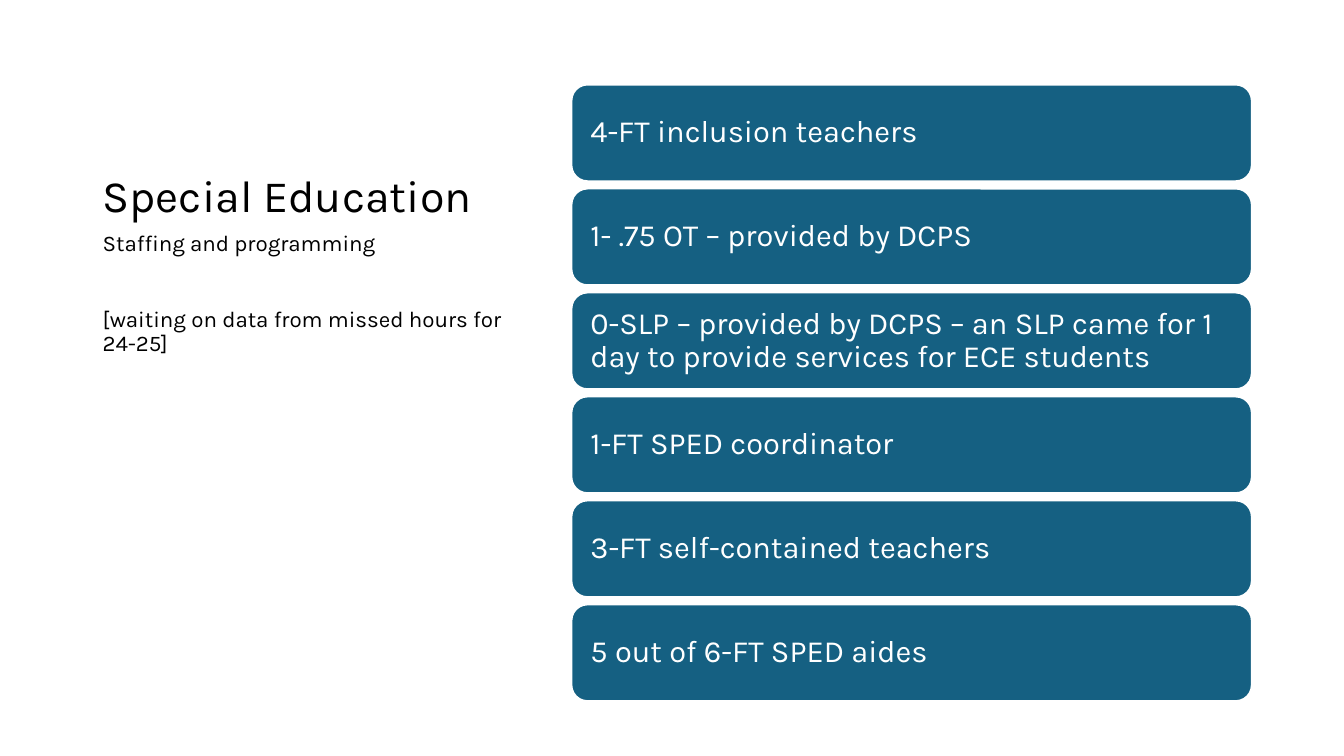
from dataclasses import dataclass

from pptx import Presentation
from pptx.dml.color import RGBColor
from pptx.enum.shapes import MSO_SHAPE
from pptx.enum.text import MSO_ANCHOR, PP_ALIGN
from pptx.util import Cm, Pt


@dataclass(frozen=True)
class Theme:
    font: str = "Karla"
    ink: RGBColor = RGBColor(0x00, 0x00, 0x00)
    paper: RGBColor = RGBColor(0xFF, 0xFF, 0xFF)
    card: RGBColor = RGBColor(0x15, 0x60, 0x82)
    title_size: int = 32
    card_size: int = 22
    body_size: int = 16


def write(tf, text, *, font, size, color, before=0, new=False):
    """Fill the first paragraph of tf, or a new one after it."""
    p = tf.add_paragraph() if new else tf.paragraphs[0]
    p.alignment = PP_ALIGN.LEFT
    p.line_spacing = 0.9
    p.space_before = Pt(before)
    r = p.add_run()
    r.text = text
    r.font.name = font
    r.font.size = Pt(size)
    r.font.color.rgb = color


class SlideBuilder:
    def __init__(self, prs, theme):
        self.theme = theme
        self.s = prs.slides.add_slide(prs.slide_layouts[6])

    def text(self, x, y, w, h, lines, size, anchor=MSO_ANCHOR.TOP):
        """Add a text box; lines holds pairs of text and space before in points."""
        tf = self.s.shapes.add_textbox(Cm(x), Cm(y), Cm(w), Cm(h)).text_frame
        tf.word_wrap = True
        tf.vertical_anchor = anchor
        for i, (line, before) in enumerate(lines):
            write(tf, line, font=self.theme.font, size=size,
                  color=self.theme.ink, before=before, new=i > 0)

    def card(self, x, y, w, h, text):
        sp = self.s.shapes.add_shape(
            MSO_SHAPE.ROUNDED_RECTANGLE, Cm(x), Cm(y), Cm(w), Cm(h))
        sp.shadow.inherit = False
        sp.fill.solid()
        sp.fill.fore_color.rgb = self.theme.card
        sp.line.color.rgb = self.theme.paper
        sp.line.width = Pt(1.5)
        tf = sp.text_frame
        tf.word_wrap = True
        tf.vertical_anchor = MSO_ANCHOR.MIDDLE
        tf.margin_left = tf.margin_right = Cm(0.36)
        tf.margin_top = tf.margin_bottom = Cm(0.36)
        write(tf, text, font=self.theme.font, size=self.theme.card_size,
              color=self.theme.paper)


STAFFING = [
    "4-FT inclusion teachers",
    "1- .75 OT – provided by DCPS",
    "0-SLP – provided by DCPS – an SLP came for 1 day to provide services "
    "for ECE students",
    "1-FT SPED coordinator",
    "3-FT self-contained teachers",
    "5 out of 6-FT SPED aides",
]
CARD_TOP, CARD_PITCH = 2.13, 2.62


def main():
    prs = Presentation()
    prs.slide_width, prs.slide_height = Cm(33.87), Cm(19.05)
    theme = Theme()
    slide = SlideBuilder(prs, theme)
    slide.text(2.34, 1.27, 10.92, 4.45, [("Special Education", 0)],
               theme.title_size, MSO_ANCHOR.BOTTOM)
    for i, role in enumerate(STAFFING):
        slide.card(14.4, CARD_TOP + i * CARD_PITCH, 17.15, 2.44, role)
    slide.text(2.34, 5.72, 10.92, 10.59,
               [("Staffing and programming", 0),
                ("[waiting on data from missed hours for 24-25]", 37)],
               theme.body_size)
    prs.save("out.pptx")


if __name__ == "__main__":
    main()
